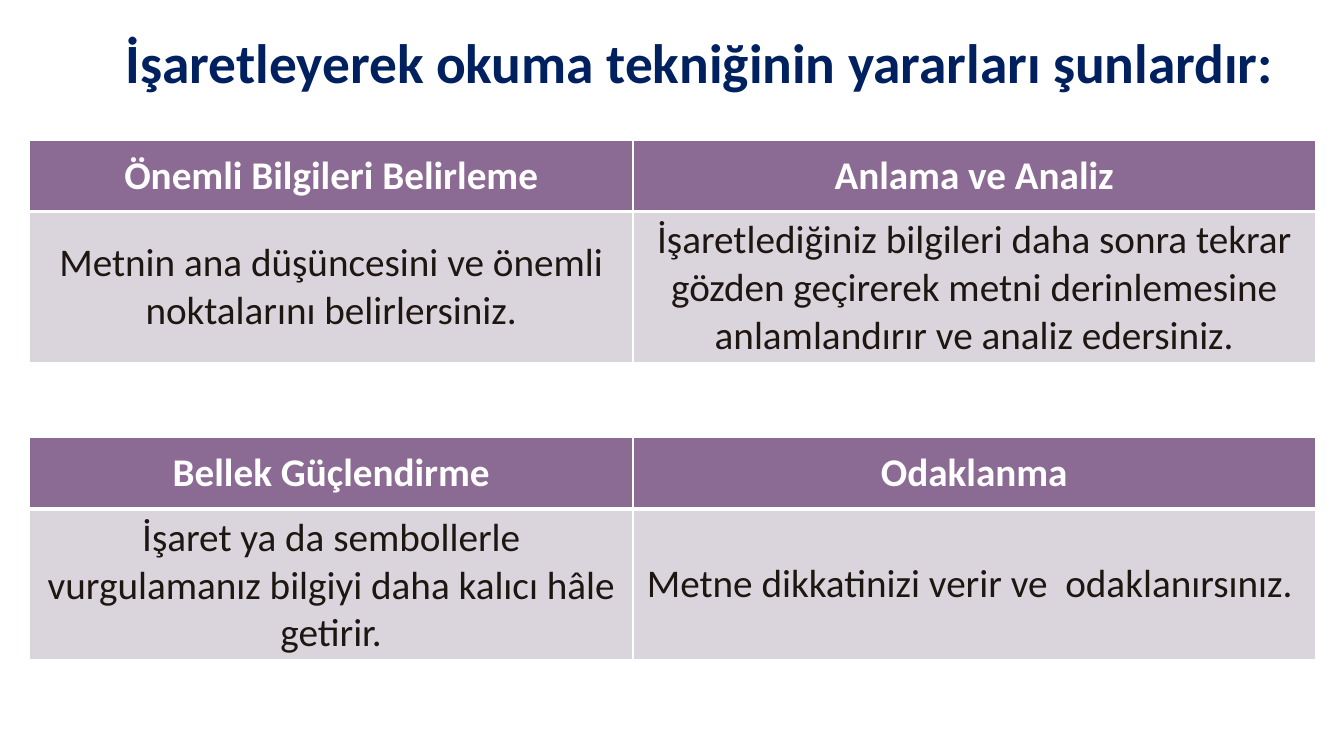
import pptx
import pptx.util
import pptx.dml.color
import pptx.enum.text
import pptx.oxml
import pptx.oxml.ns
from pptx.util import Cm

COLORS = {
    "title": "002060",
    "header": "8B6A94",
    "body": "DAD4DC",
    "text": "1D1611",
    "white": "FFFFFF",
}
COL_WIDTHS = (15.21, 17.2)
ROW_HEIGHTS = (1.8, 3.81)
TABLE_LEFT = 0.74
TABLES = [
    (3.53, [
        ["Önemli Bilgileri Belirleme", "Anlama ve Analiz"],
        ["Metnin ana düşüncesini ve önemli noktalarını belirlersiniz.",
         "İşaretlediğiniz bilgileri daha sonra tekrar gözden geçirerek metni "
         "derinlemesine anlamlandırır ve analiz edersiniz."],
    ]),
    (11.02, [
        ["Bellek Güçlendirme", "Odaklanma"],
        ["İşaret ya da sembollerle vurgulamanız bilgiyi daha kalıcı hâle getirir.",
         "Metne dikkatinizi verir ve  odaklanırsınız. "],
    ]),
]


def rgb(name):
    return pptx.dml.color.RGBColor.from_string(COLORS[name])


def write(tf, text, size=28, color="text", bold=False, spacing=None):
    p = tf.paragraphs[0]
    p.alignment = pptx.enum.text.PP_ALIGN.CENTER
    if spacing:
        p.line_spacing = spacing
    r = p.add_run()
    r.text = text
    r.font.name = "Calibri"
    r.font.size = pptx.util.Pt(size)
    r.font.bold = bold
    r.font.color.rgb = rgb(color)


def add_title(s, text):
    sp = s.shapes.add_textbox(Cm(2.54), Cm(0.91), Cm(30.2), Cm(1.65))
    tf = sp.text_frame
    tf.word_wrap = True
    tf.vertical_anchor = pptx.enum.text.MSO_ANCHOR.BOTTOM
    tf.margin_left = tf.margin_right = Cm(0.33)
    tf.margin_top = tf.margin_bottom = Cm(0.18)
    write(tf, text, size=39.6, color="title", bold=True, spacing=0.85)


def set_borders(cell, **widths):
    tcPr = cell._tc.get_or_add_tcPr()
    for side in "LRTB":
        width = pptx.util.Pt(widths.get(side, 1))
        tcPr.append(pptx.oxml.parse_xml(
            f'<a:ln{side} {pptx.oxml.ns.nsdecls("a")} w="{width}"><a:solidFill>'
            f'<a:srgbClr val="{COLORS["white"]}"/></a:solidFill></a:ln{side}>'))


def add_benefits(s, top, rows):
    table = s.shapes.add_table(
        len(rows), len(COL_WIDTHS), Cm(TABLE_LEFT), Cm(top),
        Cm(sum(COL_WIDTHS)), Cm(sum(ROW_HEIGHTS))).table
    for col, width in zip(table.columns, COL_WIDTHS):
        col.width = Cm(width)
    for i, texts in enumerate(rows):
        header = i == 0
        table.rows[i].height = Cm(ROW_HEIGHTS[i])
        for j, text in enumerate(texts):
            cell = table.cell(i, j)
            set_borders(cell, **{"B" if header else "T": 3})
            cell.fill.solid()
            cell.fill.fore_color.rgb = rgb("header" if header else "body")
            cell.vertical_anchor = pptx.enum.text.MSO_ANCHOR.MIDDLE
            write(cell.text_frame, text, bold=header,
                  color="white" if header else "text")


def main():
    prs = pptx.Presentation()
    prs.slide_width, prs.slide_height = Cm(33.87), Cm(19.05)
    s = prs.slides.add_slide(prs.slide_layouts[6])
    add_title(s, "İşaretleyerek okuma tekniğinin yararları şunlardır:")
    for top, rows in TABLES:
        add_benefits(s, top, rows)
    prs.save("out.pptx")


if __name__ == "__main__":
    main()
